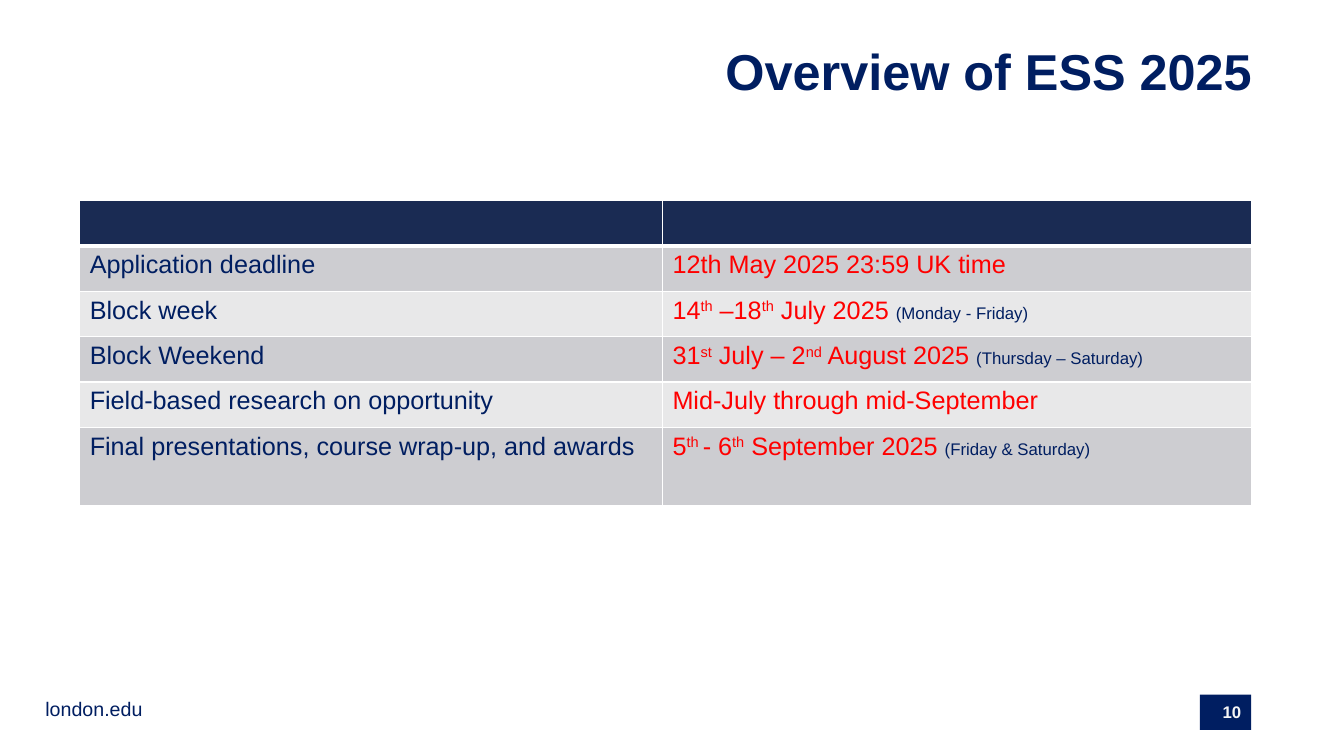
from lxml.etree import SubElement
from pptx import Presentation
from pptx.dml.color import RGBColor
from pptx.enum.shapes import MSO_SHAPE
from pptx.enum.text import MSO_ANCHOR, PP_ALIGN
from pptx.oxml.ns import qn
from pptx.util import Inches, Pt

NAVY, RED, WHITE = "001E61", "FF0000", "FFFFFF"
HEADER, BANDS = "1A2B53", ("CDCDD1", "E8E8E9")

# Carets enclose superscript text; the last item is the weekday note.
SCHEDULE = [
    ("Application deadline", "12th May 2025 23:59 UK time", ""),
    ("Block week", "14^th^ –18^th^ July 2025 ", "(Monday - Friday)"),
    ("Block Weekend", "31^st^ July – 2^nd^ August 2025 ", "(Thursday – Saturday)"),
    ("Field-based research on opportunity", "Mid-July through mid-September", ""),
    ("Final presentations, course wrap-up, and awards",
     "5^th ^- 6^th^ September 2025 ", "(Friday & Saturday)"),
]


def rgb(color):
    return RGBColor.from_string(color)


def add_text(p, text, size=18, color=NAVY, bold=False, align=None, spacing=None):
    """Add text to a paragraph, raising the parts between carets."""
    if align is not None:
        p.alignment = align
    if spacing is not None:
        p.line_spacing = spacing
    for i, part in enumerate(text.split("^")):
        if not part:
            continue
        r = p.add_run()
        r.text = part
        r.font.name = "Arial"
        r.font.size = Pt(size)
        r.font.bold = bold
        r.font.color.rgb = rgb(color)
        if i % 2:
            r.font._element.set("baseline", "30000")


def set_frame(tf, anchor, left=0.1, right=0.1):
    tf.word_wrap = True
    tf.vertical_anchor = anchor
    tf.margin_left, tf.margin_right = Inches(left), Inches(right)
    tf.margin_top = tf.margin_bottom = Inches(0.05)


def set_borders(cell, bottom=1):
    tcPr = cell._tc.get_or_add_tcPr()
    for side, width in (("L", 1), ("R", 1), ("T", 1), ("B", bottom)):
        ln = SubElement(tcPr, qn(f"a:ln{side}"), w=str(Pt(width)))
        fill = SubElement(ln, qn("a:solidFill"))
        SubElement(fill, qn("a:srgbClr"), val=WHITE)


def add_title(s, text):
    title = s.shapes.title
    title.left, title.top = Inches(3.48), Inches(0.42)
    title.width, title.height = Inches(8.94), Inches(0.43)
    set_frame(title.text_frame, MSO_ANCHOR.TOP, right=0)
    add_text(title.text_frame.paragraphs[0], text, size=36, bold=True,
             align=PP_ALIGN.RIGHT, spacing=0.9)


def add_schedule(s):
    heights = [0.45] * len(SCHEDULE) + [0.78]
    table = s.shapes.add_table(len(heights), 2, Inches(0.79), Inches(1.99),
                               Inches(11.62), Inches(sum(heights))).table
    for column, width in zip(table.columns, (5.78, 5.84)):
        column.width = Inches(width)
    for i, height in enumerate(heights):
        row = table.rows[i]
        row.height = Inches(height)
        for cell in row.cells:
            set_borders(cell, bottom=1 if i else 3)
            cell.fill.solid()
            cell.fill.fore_color.rgb = rgb(BANDS[(i - 1) % 2] if i else HEADER)
    for i, (event, date, note) in enumerate(SCHEDULE, start=1):
        add_text(table.cell(i, 0).text_frame.paragraphs[0], event)
        p = table.cell(i, 1).text_frame.paragraphs[0]
        add_text(p, date, color=RED)
        add_text(p, note, size=12)


def add_footer(s, text, number):
    box = s.shapes.add_textbox(Inches(0.45), Inches(6.75), Inches(3.72), Inches(0.45))
    set_frame(box.text_frame, MSO_ANCHOR.BOTTOM, left=0)
    add_text(box.text_frame.paragraphs[0], text, size=14, spacing=0.9)

    badge = s.shapes.add_shape(MSO_SHAPE.RECTANGLE, Inches(11.9), Inches(6.89),
                               Inches(0.51), Inches(0.35))
    badge.shadow.inherit = False
    badge.fill.solid()
    badge.fill.fore_color.rgb = rgb(NAVY)
    badge.line.fill.background()
    set_frame(badge.text_frame, MSO_ANCHOR.MIDDLE)
    add_text(badge.text_frame.paragraphs[0], number, size=12, color="F6F6F6",
             bold=True, align=PP_ALIGN.RIGHT)


def main():
    prs = Presentation()
    prs.slide_width, prs.slide_height = Inches(13.33), Inches(7.5)
    s = prs.slides.add_slide(prs.slide_layouts[5])
    add_title(s, "Overview of ESS 2025")
    add_schedule(s)
    add_footer(s, "london.edu", "10")
    prs.save("out.pptx")


if __name__ == "__main__":
    main()
